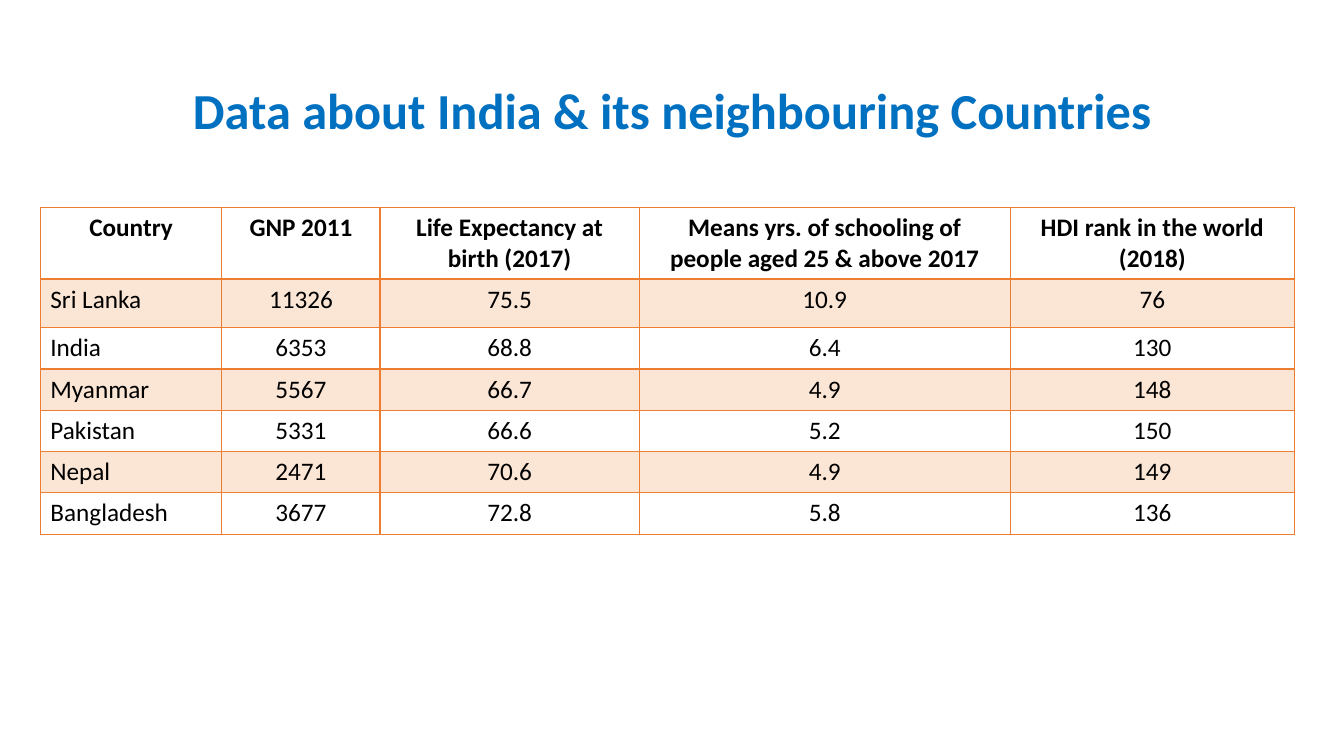
"""Build a slide with a table comparing India and its neighbouring countries."""
from lxml import etree
from pptx import Presentation
from pptx.dml.color import RGBColor
from pptx.enum import text
from pptx.oxml import ns
from pptx.util import Inches, Pt

COLORS = {"title": "0070C0", "text": "000000", "accent": "ED7D31"}
COLUMN_WIDTHS = [1.8, 1.57, 2.57, 3.68, 2.82]
ROW_HEIGHTS = [0.7, 0.48] + [0.41] * 5
ROWS = [
    ["Country", "GNP 2011", "Life Expectancy at birth (2017)",
     "Means yrs. of schooling of people aged 25 & above 2017",
     "HDI rank in the world (2018)"],
    ["Sri Lanka", "11326", "75.5", "10.9", "76"],
    ["India", "6353", "68.8", "6.4", "130"],
    ["Myanmar", "5567", "66.7", "4.9", "148"],
    ["Pakistan", "5331", "66.6", "5.2", "150"],
    ["Nepal", "2471", "70.6", "4.9", "149"],
    ["Bangladesh", "3677", "72.8", "5.8", "136"],
]


def style_paragraph(paragraph, size, color, bold, alignment):
    paragraph.alignment = alignment
    paragraph.font.name = "Calibri"
    paragraph.font.size = Pt(size)
    paragraph.font.bold = bold
    paragraph.font.color.rgb = RGBColor.from_string(COLORS[color])


def add_borders(cell, bottom_width):
    properties = cell._tc.get_or_add_tcPr()
    widths = {"a:lnL": 1, "a:lnR": 1, "a:lnT": 1, "a:lnB": bottom_width}
    for position, (side, width) in enumerate(widths.items()):
        line = etree.Element(ns.qn(side), w=str(Pt(width)))
        fill = etree.SubElement(line, ns.qn("a:solidFill"))
        etree.SubElement(fill, ns.qn("a:srgbClr"), val=COLORS["accent"])
        properties.insert(position, line)


presentation = Presentation()
presentation.slide_width = Inches(13.33)
presentation.slide_height = Inches(7.5)
slide = presentation.slides.add_slide(presentation.slide_layouts[5])

title = slide.shapes.title
title.left, title.top = Inches(0.92), Inches(0.4)
title.width, title.height = Inches(11.5), Inches(1.45)
title.text_frame.text = "Data about India & its neighbouring Countries"
title.text_frame.vertical_anchor = text.MSO_ANCHOR.MIDDLE
title_paragraph = title.text_frame.paragraphs[0]
title_paragraph.line_spacing = 0.9
style_paragraph(title_paragraph, 36, "title", True, text.PP_ALIGN.CENTER)

table = slide.shapes.add_table(
    len(ROWS), len(COLUMN_WIDTHS), Inches(0.4), Inches(2.06),
    Inches(sum(COLUMN_WIDTHS)), Inches(sum(ROW_HEIGHTS))).table
for column, width in zip(table.columns, COLUMN_WIDTHS):
    column.width = Inches(width)
for row, height in zip(table.rows, ROW_HEIGHTS):
    row.height = Inches(height)

for row_index, values in enumerate(ROWS):
    is_header = row_index == 0
    for column_index, value in enumerate(values):
        cell = table.cell(row_index, column_index)
        cell.text = value
        is_name = column_index == 0 and not is_header
        alignment = text.PP_ALIGN.LEFT if is_name else text.PP_ALIGN.CENTER
        style_paragraph(cell.text_frame.paragraphs[0], 18, "text", is_header, alignment)
        if row_index % 2:
            cell.fill.solid()
            cell.fill.fore_color.rgb = RGBColor.from_string(COLORS["accent"])
            fill_color = cell._tc.tcPr.find(".//" + ns.qn("a:srgbClr"))
            etree.SubElement(fill_color, ns.qn("a:alpha"), val="20000")
        else:
            cell.fill.background()
        add_borders(cell, 2 if is_header else 1)

presentation.save("out.pptx")
